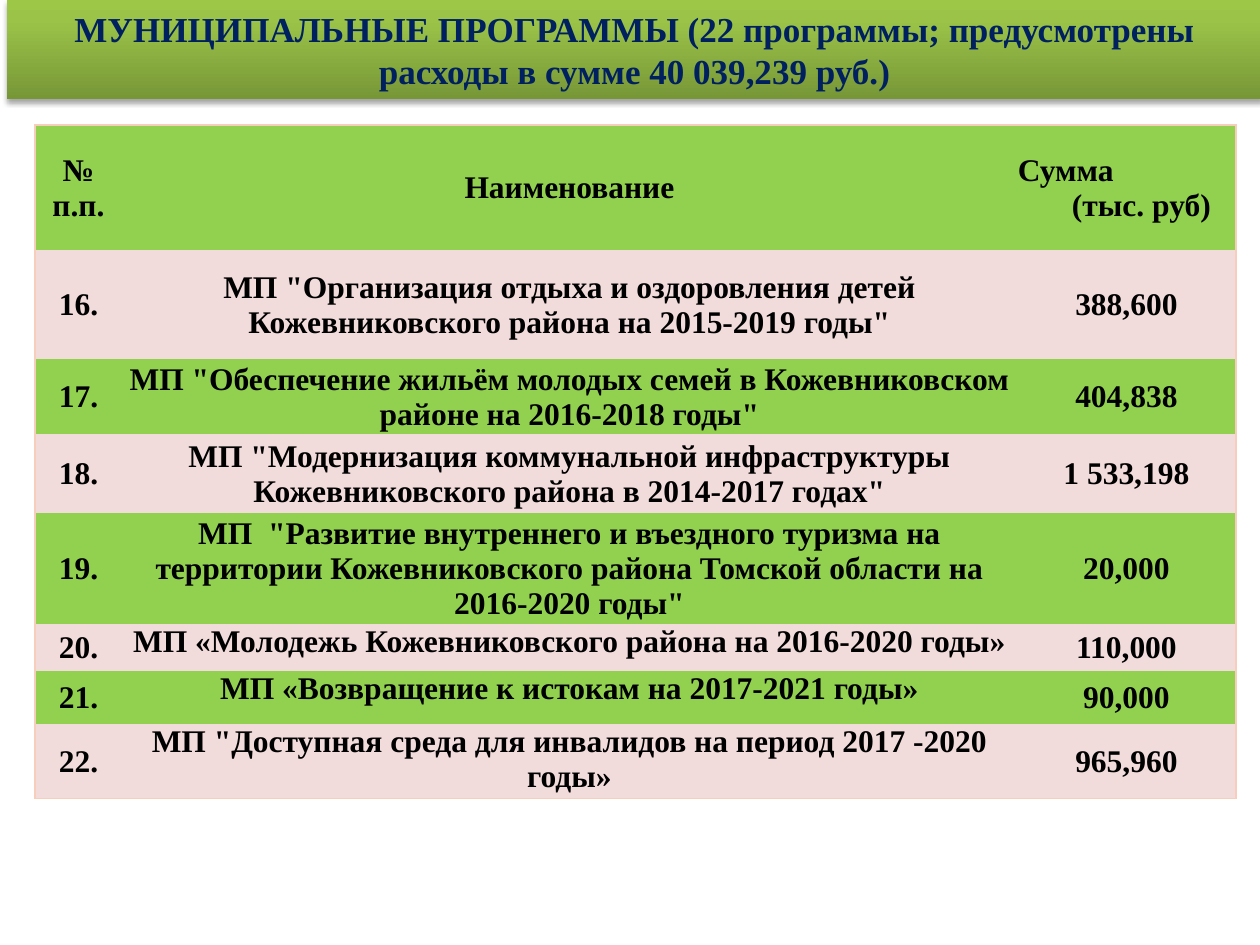
from copy import deepcopy
from dataclasses import dataclass

from lxml.etree import SubElement
from pptx import Presentation
from pptx.dml.color import RGBColor
from pptx.enum.shapes import MSO_SHAPE as SHAPE
from pptx.enum.text import MSO_ANCHOR as ANCHOR, PP_ALIGN as ALIGN
from pptx.oxml.ns import qn
from pptx.util import Emu, Pt

EMU_PER_PX = 914400 / 126
FONT = "Times New Roman"
COLORS = {
    "green": "92D050", "pink": "F2DCDB", "border": "F7CEBB",
    "text": "000000", "title": "002060", "shadow": "000000",
    "dark": "779737", "mid": "9BC348", "light": "9DC746",
}
PLAIN_STYLE = "{2D5ABB26-0587-4C30-8999-92F81FD0307C}"
TITLE = ("МУНИЦИПАЛЬНЫЕ ПРОГРАММЫ (22 программы; предусмотрены "
         "расходы в сумме 40 039,239 руб.)")
COL_WIDTHS = (87, 895, 219)
HEADER_HEIGHT = 125


@dataclass
class Program:
    number: int
    name: str
    amount: str
    height: int
    name_anchor: ANCHOR = ANCHOR.MIDDLE


PROGRAMS = [
    Program(16, 'МП "Организация отдыха и оздоровления детей Кожевниковского '
            'района на 2015-2019 годы"', "388,600", 109),
    Program(17, 'МП "Обеспечение жильём молодых семей в Кожевниковском районе '
            'на 2016-2018 годы"', "404,838", 75),
    Program(18, 'МП "Модернизация коммунальной инфраструктуры Кожевниковского '
            'района в 2014-2017 годах"', "1 533,198", 79),
    Program(19, 'МП  "Развитие внутреннего и въездного туризма на территории '
            'Кожевниковского района Томской области на 2016-2020 годы"',
            "20,000", 111),
    Program(20, "МП «Молодежь Кожевниковского района на 2016-2020 годы»",
            "110,000", 47, ANCHOR.TOP),
    Program(21, "МП «Возвращение к истокам на 2017-2021 годы»",
            "90,000", 53, ANCHOR.TOP),
    Program(22, 'МП "Доступная среда для инвалидов на период 2017 -2020 годы»',
            "965,960", 75, ANCHOR.TOP),
]


def px(n: int) -> Emu:
    return Emu(round(n * EMU_PER_PX))


def rgb(name: str) -> RGBColor:
    return RGBColor.from_string(COLORS[name])


def add_run(p, text: str, size: int, color: str, align=ALIGN.CENTER) -> None:
    p.alignment = align
    r = p.add_run()
    r.text = text
    r.font.name = FONT
    r.font.size = Pt(size)
    r.font.bold = True
    r.font.color.rgb = rgb(color)


def add_border(cell, side: str) -> None:
    ln = SubElement(cell._tc.get_or_add_tcPr(), qn(f"a:ln{side}"), w=str(Pt(0.75)))
    fill = SubElement(ln, qn("a:solidFill"))
    SubElement(fill, qn("a:srgbClr"), val=COLORS["border"])


def format_cell(cell, fill: str, sides: str, anchor=ANCHOR.MIDDLE) -> None:
    for side in sides:
        add_border(cell, side)
    cell.fill.solid()
    cell.fill.fore_color.rgb = rgb(fill)
    cell.vertical_anchor = anchor
    cell.margin_left = cell.margin_right = cell.margin_top = px(1)
    cell.margin_bottom = 0


def outer_sides(row: int, col: int, last_row: int, last_col: int) -> str:
    edges = (("L", col == 0), ("R", col == last_col),
             ("T", row == 0), ("B", row == last_row))
    return "".join(side for side, is_outer in edges if is_outer)


def add_amount_heading(tf) -> None:
    add_run(tf.paragraphs[0], "Сумма", 18, "text", ALIGN.LEFT)
    p = tf.add_paragraph()
    add_run(p, "(тыс. руб)", 18, "text", ALIGN.LEFT)
    p._p.get_or_add_pPr().set("marL", str(px(54)))


def add_programs_table(s) -> None:
    heights = [HEADER_HEIGHT] + [program.height for program in PROGRAMS]
    frame = s.shapes.add_table(len(heights), len(COL_WIDTHS), px(35), px(125),
                               px(sum(COL_WIDTHS)), px(sum(heights)))
    table = frame.table
    frame._element.find(".//" + qn("a:tableStyleId")).text = PLAIN_STYLE
    table.horz_banding = False
    for column, width in zip(table.columns, COL_WIDTHS):
        column.width = px(width)
    for row, height in zip(table.rows, heights):
        row.height = px(height)

    texts = [("№ п.п.", "Наименование", "")]
    texts += [(f"{m.number}.", m.name, m.amount) for m in PROGRAMS]
    for i, row_texts in enumerate(texts):
        fill = "pink" if i % 2 else "green"
        for j, text in enumerate(row_texts):
            cell = table.cell(i, j)
            anchor = PROGRAMS[i - 1].name_anchor if i and j == 1 else ANCHOR.MIDDLE
            sides = outer_sides(i, j, len(texts) - 1, len(COL_WIDTHS) - 1)
            format_cell(cell, fill, sides, anchor)
            if text:
                add_run(cell.text_frame.paragraphs[0], text, 18, "text")
    add_amount_heading(table.cell(0, 2).text_frame)


def add_gradient(sp) -> None:
    sp.fill.gradient()
    sp.fill.gradient_angle = 90
    stops = sp._element.spPr.find(".//" + qn("a:gsLst"))
    stops.insert(1, deepcopy(stops[0]))
    for stop, position, color in zip(sp.fill.gradient_stops, (0, 0.8, 1),
                                     ("dark", "mid", "light")):
        stop.position = position
        stop.color.rgb = rgb(color)


def add_shadow(sp) -> None:
    sp.shadow.inherit = False
    effects = sp._element.spPr.find(qn("a:effectLst"))
    shadow = SubElement(effects, qn("a:outerShdw"), blurRad=str(Pt(3.1)),
                        dist=str(Pt(1.8)), dir="5400000", rotWithShape="0")
    color = SubElement(shadow, qn("a:srgbClr"), val=COLORS["shadow"])
    SubElement(color, qn("a:alpha"), val="35000")


def add_title(s) -> None:
    sp = s.shapes.add_shape(SHAPE.RECTANGLE, px(7), px(0), px(1255), px(99))
    add_gradient(sp)
    sp.line.fill.background()
    add_shadow(sp)
    tf = sp.text_frame
    tf.word_wrap = True
    tf.vertical_anchor = ANCHOR.MIDDLE
    add_run(tf.paragraphs[0], TITLE, 20, "title")


def main() -> None:
    prs = Presentation()
    prs.slide_width, prs.slide_height = px(1260), px(945)
    s = prs.slides.add_slide(prs.slide_layouts[6])
    add_programs_table(s)
    add_title(s)
    prs.save("out.pptx")


if __name__ == "__main__":
    main()
